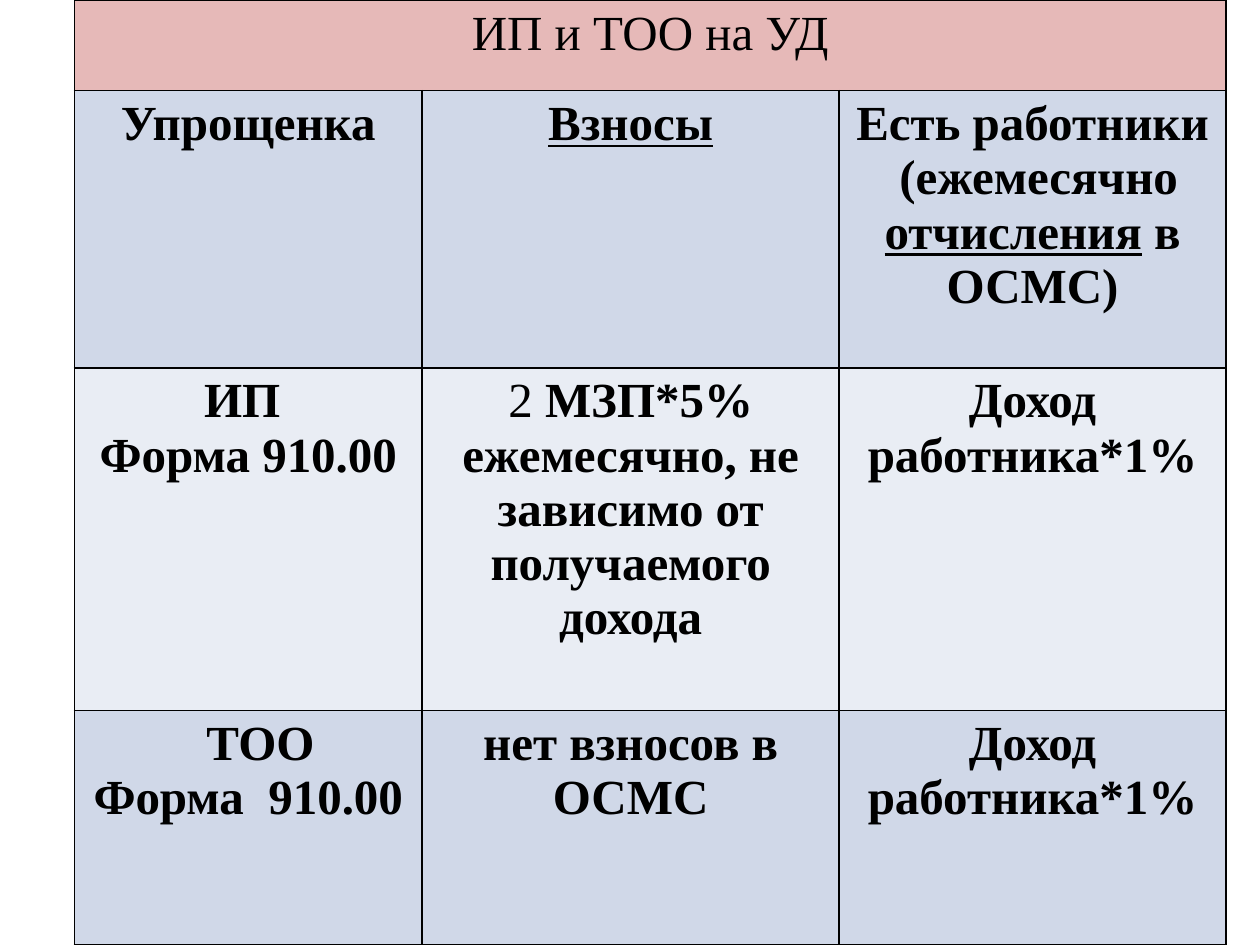
from lxml import etree
from pptx import Presentation, util as u
from pptx.dml.color import RGBColor
from pptx.enum import text
from pptx.oxml.ns import qn

FONT = "Times New Roman"
BLACK = RGBColor(0x00, 0x00, 0x00)
PINK = RGBColor(0xE6, 0xB9, 0xB8)
BLUE = RGBColor(0xD0, 0xD8, 0xE8)
PALE = RGBColor(0xE9, 0xED, 0xF4)

# Column widths and row heights, in inches
COLS = [2.76, 3.31, 3.07]
ROWS = [0.72, 2.2, 2.72, 1.86]
FILLS = [PINK, BLUE, PALE, BLUE]

# Each cell is a list of paragraphs; each paragraph a list of (text, format)
INCOME = [[("Доход работника*1%", {})]]
CELLS = [
    [[[("ИП и ТОО на УД", {"bold": False})]]],
    [[[("Упрощенка", {})]],
     [[("Взносы", {"underline": True})]],
     [[("Есть работники", {})],
      [(" (ежемесячно ", {}), ("отчисления", {"underline": True}),
       (" в ОСМС)", {})]]],
    [[[("ИП ", {})], [("Форма 910.00", {})]],
     [[("2 ", {"bold": False}),
       ("МЗП*5% ежемесячно, не зависимо от получаемого дохода", {})]],
     INCOME],
    [[[("  ТОО", {})], [("Форма  910.00", {})]],
     [[("нет взносов в ОСМС", {})]],
     INCOME],
]


def add_run(p, words, size=28, bold=True, underline=False, color=BLACK):
    r = p.add_run()
    r.text = words
    r.font.name = FONT
    r.font.size = u.Pt(size)
    r.font.bold = bold
    r.font.underline = underline
    r.font.color.rgb = color


def set_borders(cell, color=BLACK, width=1):
    tc_pr = cell._tc.get_or_add_tcPr()
    for i, side in enumerate(("lnL", "lnR", "lnT", "lnB")):
        ln = etree.Element(qn(f"a:{side}"), w=str(u.Pt(width)))
        fill = etree.SubElement(ln, qn("a:solidFill"))
        etree.SubElement(fill, qn("a:srgbClr"), val=str(color))
        tc_pr.insert(i, ln)  # borders come before the fill


def fill_cell(cell, paragraphs):
    tf = cell.text_frame
    for i, runs in enumerate(paragraphs):
        p = tf.add_paragraph() if i else tf.paragraphs[0]
        p.alignment = text.PP_ALIGN.CENTER
        for words, fmt in runs:
            add_run(p, words, **fmt)


def add_rates_table(s, left, top, width, height):
    table = s.shapes.add_table(len(ROWS), len(COLS),
                               left, top, width, height).table
    table.first_row = table.horz_banding = False
    for col, share in zip(table.columns, COLS):
        col.width = int(width * share / sum(COLS))
    for row, share in zip(table.rows, ROWS):
        row.height = int(height * share / sum(ROWS))

    # Heading spans all columns
    table.cell(0, 0).merge(table.cell(0, len(COLS) - 1))

    for row, fill, contents in zip(table.rows, FILLS, CELLS):
        for cell in row.cells:
            cell.fill.solid()
            cell.fill.fore_color.rgb = fill
            set_borders(cell)
        for cell, paragraphs in zip(row.cells, contents):
            fill_cell(cell, paragraphs)


def main():
    prs = Presentation()
    prs.slide_width, prs.slide_height = u.Inches(10), u.Inches(7.5)
    s = prs.slides.add_slide(prs.slide_layouts[6])
    add_rates_table(s, u.Inches(0.59), 0, u.Inches(sum(COLS)),
                    prs.slide_height)
    prs.save("out.pptx")


if __name__ == "__main__":
    main()
